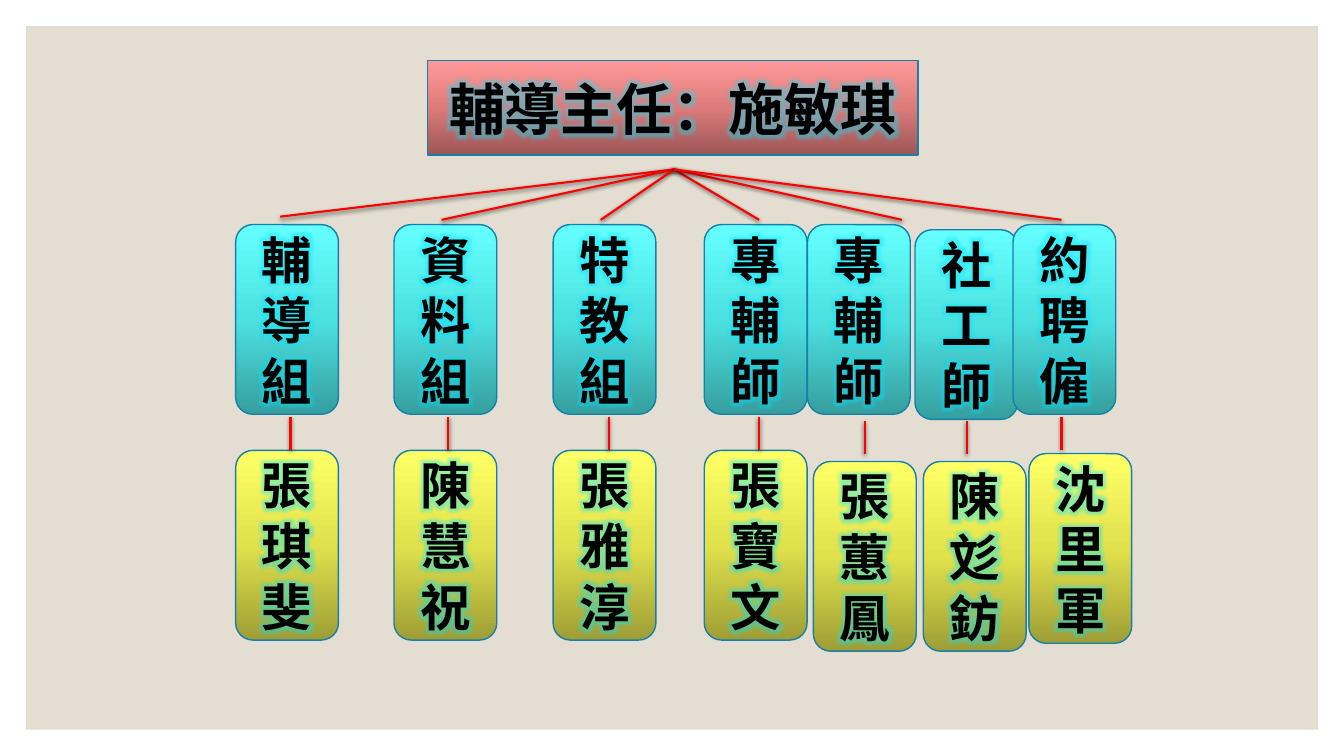
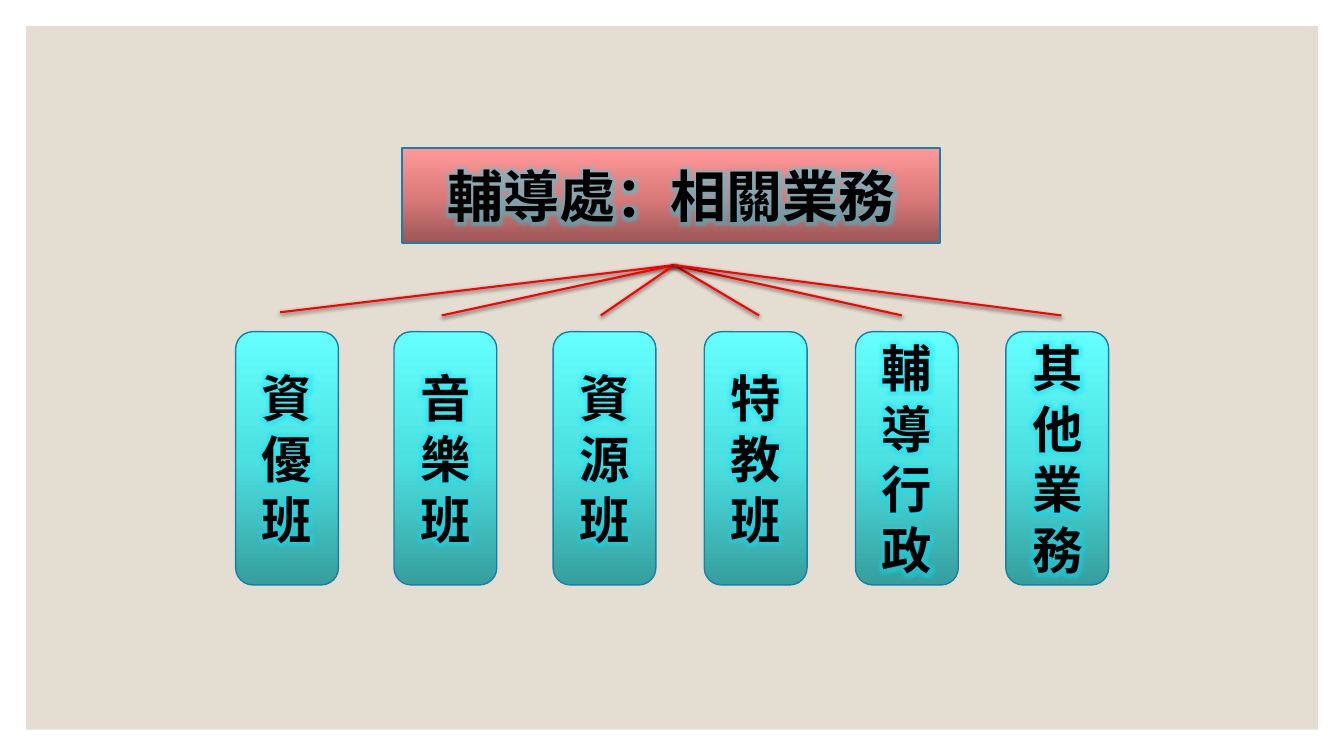
from dataclasses import dataclass

from lxml.etree import SubElement
from pptx import Presentation
from pptx.dml.color import RGBColor
from pptx.enum.shapes import MSO_CONNECTOR, MSO_SHAPE
from pptx.enum.text import MSO_ANCHOR, MSO_AUTO_SIZE, PP_ALIGN
from pptx.oxml import parse_xml
from pptx.oxml.ns import nsdecls, qn
from pptx.util import Cm, Pt


@dataclass(frozen=True)
class Theme:
    font: str = "Noto Sans CJK SC"
    title_size: float = 40
    card_size: float = 36
    card_leading: float = 43.3
    text: str = "000000"
    backdrop: str = "E3DED1"
    outline: str = "1580A9"
    branch: str = "FF0000"
    glow: str = "00E5FF"
    # Gradients run from the bottom edge to the top edge.
    red: tuple[str, ...] = ("9C5656", "DD7B7B", "FF9999")
    cyan: tuple[str, ...] = ("369E9E", "4CE1E1", "66FFFF")
    yellow: tuple[str, ...] = ("9E9E36", "E1E14C", "FFFF66")


@dataclass(frozen=True)
class Box:
    """A rectangle in centimetres."""
    left: float
    top: float
    width: float
    height: float

    def lengths(self) -> tuple:
        return Cm(self.left), Cm(self.top), Cm(self.width), Cm(self.height)


@dataclass(frozen=True)
class Card:
    text: str
    left: float
    top: float


@dataclass(frozen=True)
class Stem:
    x: float
    top: float


THEME = Theme()
CARD_WIDTH = 2.59
SHORT_CARD, TALL_CARD = 4.78, 6.38
STEM_LENGTH = 0.81
HUB_X = 16.99
FAN_TIPS = ((7.06, 1.19), (11.13, 1.27), (15.14, 1.27),
            (19.13, 1.27), (22.73, 1.27), (26.75, 1.27))

ROLES = (
    Card("輔導組", 5.94, 5.66), Card("資料組", 9.93, 5.66),
    Card("特教組", 13.94, 5.66), Card("專輔師", 17.75, 5.66),
    Card("專輔師", 20.35, 5.66), Card("社工師", 23.06, 5.79),
    Card("約聘僱", 25.53, 5.66),
)
STAFF = (
    Card("張琪斐", 5.94, 11.35), Card("陳慧祝", 9.93, 11.35),
    Card("張雅淳", 13.94, 11.35), Card("張寶文", 17.75, 11.35),
    Card("張蕙鳳", 20.5, 11.63), Card("陳彣鈁", 23.27, 11.63),
    Card("沈里軍", 25.93, 11.43),
)
STEMS = (
    Stem(7.32, 10.52), Stem(11.3, 10.52), Stem(15.34, 10.52),
    Stem(19.13, 10.52), Stem(21.79, 10.62), Stem(24.36, 10.62),
    Stem(26.75, 10.52),
)
DUTIES = tuple(Card(text, left, 8.36) for text, left in (
    ("資優班", 5.94), ("音樂班", 9.93), ("資源班", 13.94),
    ("特教班", 17.75), ("輔導行政", 21.56), ("其\n他\n業務", 25.35),
))


def paint(shape, gradient: tuple[str, ...]) -> None:
    """Give a new shape its gradient fill and outline."""
    stops = "".join(
        f'<a:gs pos="{index * 50000}"><a:srgbClr val="{color}"/></a:gs>'
        for index, color in enumerate(gradient))
    shape.element.spPr.append(parse_xml(
        f'<a:gradFill {nsdecls("a")} rotWithShape="1"><a:gsLst>{stops}</a:gsLst>'
        '<a:lin ang="16200000" scaled="0"/></a:gradFill>'))
    shape.line.color.rgb = RGBColor.from_string(THEME.outline)
    shape.line.width = Pt(1)


def write(shape, text: str, size: float, leading: float | None = None) -> None:
    """Set centred bold text with a soft glow."""
    frame = shape.text_frame
    frame.text = text
    frame.word_wrap = True
    frame.auto_size = MSO_AUTO_SIZE.NONE
    frame.vertical_anchor = MSO_ANCHOR.MIDDLE
    for paragraph in frame.paragraphs:
        paragraph.alignment = PP_ALIGN.CENTER
        if leading:
            paragraph.line_spacing = Pt(leading)
        for run in paragraph.runs:
            run.font.size = Pt(size)
            run.font.bold = True
            run.font.color.rgb = RGBColor.from_string(THEME.text)
    for properties in shape.element.iter(qn("a:rPr")):
        properties.append(parse_xml(
            f'<a:effectLst {nsdecls("a")}><a:glow rad="139700">'
            f'<a:srgbClr val="{THEME.glow}"><a:alpha val="40000"/></a:srgbClr>'
            '</a:glow></a:effectLst>'))
        for script in ("a:latin", "a:ea"):
            SubElement(properties, qn(script)).set("typeface", THEME.font)


def add_heading(slide, text: str, box: Box) -> None:
    title = slide.shapes.title
    title.left, title.top, title.width, title.height = box.lengths()
    title.element.spPr.append(parse_xml(
        f'<a:prstGeom {nsdecls("a")} prst="roundRect"><a:avLst/></a:prstGeom>'))
    paint(title, THEME.red)
    write(title, text, THEME.title_size)


def add_cards(slide, cards: tuple[Card, ...], height: float,
              gradient: tuple[str, ...]) -> None:
    for card in cards:
        box = Box(card.left, card.top, CARD_WIDTH, height)
        shape = slide.shapes.add_shape(MSO_SHAPE.ROUNDED_RECTANGLE, *box.lengths())
        paint(shape, gradient)
        shape.shadow.inherit = False
        write(shape, card.text, THEME.card_size, THEME.card_leading)


def add_branch(slide, x1: float, y1: float, x2: float, y2: float) -> None:
    branch = slide.shapes.add_connector(
        MSO_CONNECTOR.STRAIGHT, Cm(x1), Cm(y1), Cm(x2), Cm(y2))
    branch.line.color.rgb = RGBColor.from_string(THEME.branch)
    branch.line.width = Pt(1.5)
    branch.element.spPr.append(parse_xml(
        f'<a:effectLst {nsdecls("a")}><a:outerShdw blurRad="38100" dist="12700" '
        'dir="5400000" rotWithShape="0"><a:srgbClr val="000000">'
        '<a:alpha val="63000"/></a:srgbClr></a:outerShdw></a:effectLst>'))


def add_fan(slide, hub_y: float) -> None:
    for tip_x, drop in FAN_TIPS:
        add_branch(slide, HUB_X, hub_y, tip_x, hub_y + drop)


def add_backdrop(slide) -> None:
    """Draw the backdrop and move it into the layout, behind every slide."""
    backdrop = slide.shapes.add_shape(
        MSO_SHAPE.RECTANGLE, *Box(0.66, 0.66, 32.56, 17.73).lengths())
    backdrop.fill.solid()
    backdrop.fill.fore_color.rgb = RGBColor.from_string(THEME.backdrop)
    backdrop.line.fill.background()
    backdrop.shadow.inherit = False
    slide.slide_layout.shapes.element.insert(2, backdrop.element)


def main() -> None:
    deck = Presentation()
    deck.slide_width, deck.slide_height = Cm(33.87), Cm(19.05)
    title_only = deck.slide_layouts[5]

    team = deck.slides.add_slide(title_only)
    add_backdrop(team)
    add_heading(team, "輔導主任：施敏琪", Box(10.77, 1.52, 12.37, 2.39))
    add_cards(team, ROLES, SHORT_CARD, THEME.cyan)
    add_cards(team, STAFF, SHORT_CARD, THEME.yellow)
    add_fan(team, 4.27)
    for stem in STEMS:
        add_branch(team, stem.x, stem.top, stem.x, stem.top + STEM_LENGTH)

    services = deck.slides.add_slide(title_only)
    add_heading(services, "輔導處：相關業務", Box(10.13, 3.73, 13.56, 2.39))
    add_cards(services, DUTIES, TALL_CARD, THEME.cyan)
    add_fan(services, 6.68)

    deck.save("out.pptx")


if __name__ == "__main__":
    main()
